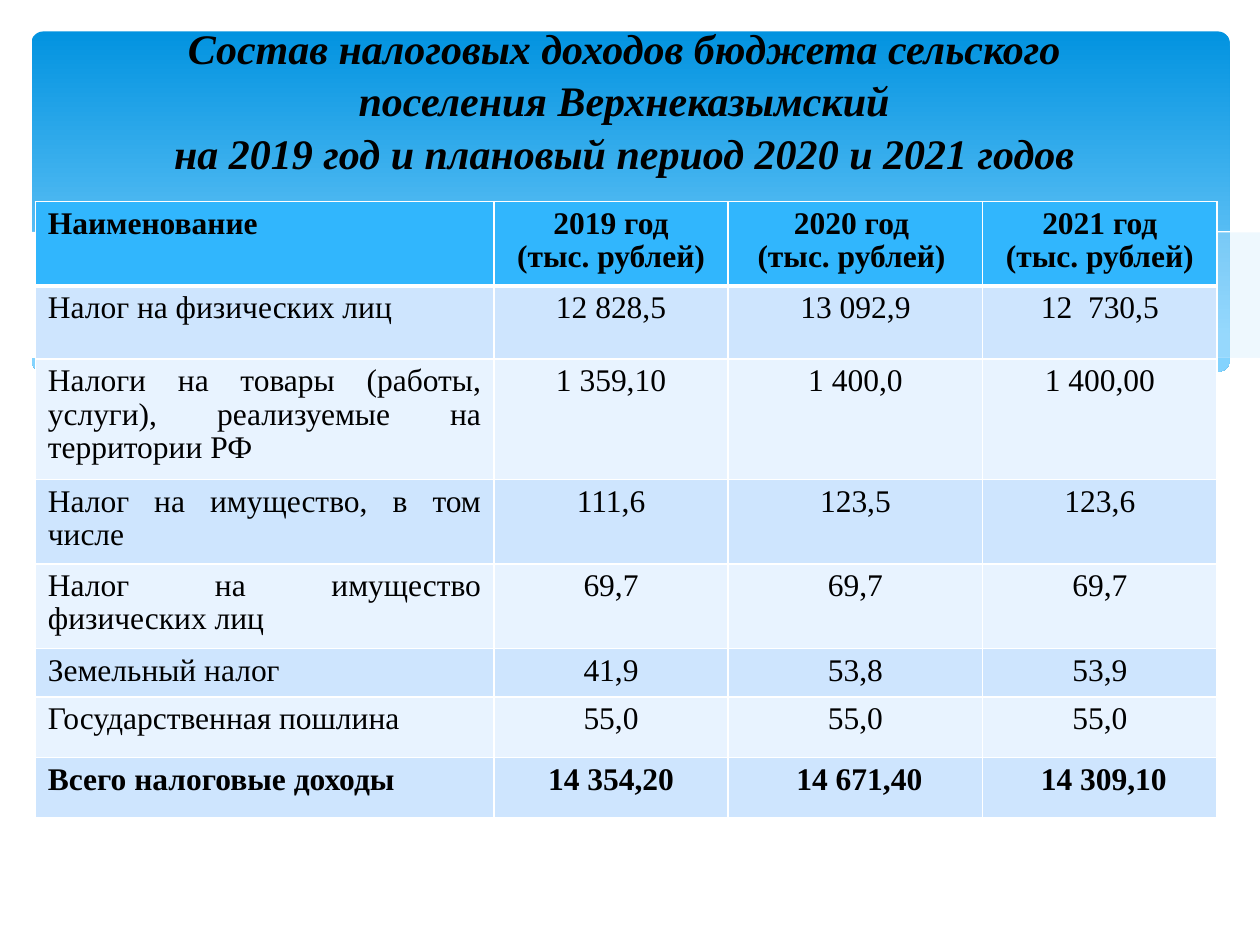
from lxml import etree
from pptx import Presentation
from pptx.dml.color import RGBColor
from pptx.enum.shapes import MSO_SHAPE
from pptx.enum.text import MSO_ANCHOR, PP_ALIGN
from pptx.oxml.ns import qn
from pptx.util import Inches, Pt

ROUND_RECT = MSO_SHAPE.ROUNDED_RECTANGLE
MIDDLE = MSO_ANCHOR.MIDDLE
LEFT, CENTER, JUSTIFY = PP_ALIGN.LEFT, PP_ALIGN.CENTER, PP_ALIGN.JUSTIFY

BLACK = RGBColor(0x00, 0x00, 0x00)
WHITE = RGBColor(0xFF, 0xFF, 0xFF)
SKY_TOP = RGBColor(0x02, 0x93, 0xE0)
SKY_BOTTOM = RGBColor(0x83, 0xD3, 0xFE)
WAVE = RGBColor(0xC6, 0xE7, 0xFC)
HEADER = RGBColor(0x31, 0xB6, 0xFD)
BAND_DARK = RGBColor(0xCE, 0xE5, 0xFE)
BAND_LIGHT = RGBColor(0xE8, 0xF3, 0xFF)
FONT = "Times New Roman"

RIGHT_WAVE = [
    (9.52, 0.16), (9.12, 0.23), (8.68, 0.32), (8.09, 0.46), (7.3, 0.64),
    (6.38, 0.81), (6.82, 0.87), (7.34, 0.92), (7.91, 0.94), (8.4, 0.91),
    (8.82, 0.85), (9.19, 0.75), (9.53, 0.63), (9.53, 0.16)]
MIDDLE_WAVE = [
    (8.7, 0.89), (7.84, 0.76), (6.83, 0.56), (6.06, 0.38), (5.32, 0.21),
    (4.66, 0.1), (3.97, 0.03), (3.38, 0.01), (2.63, 0.07), (3.39, 0.19),
    (4.26, 0.38), (5.07, 0.56), (5.78, 0.71), (6.57, 0.84), (7.25, 0.92),
    (7.95, 0.94), (8.34, 0.93)]
FALLING_LINE = [
    (2.86, 0.11), (3.3, 0.05), (3.93, 0.03), (4.66, 0.06), (5.33, 0.13),
    (6.13, 0.24), (7.04, 0.42), (8.08, 0.67), (8.84, 0.88)]
RISING_LINE = [
    (5.9, 0.73), (6.72, 0.51), (7.53, 0.32), (8.43, 0.15), (9.01, 0.06),
    (9.52, 0.01)]
WHITE_WAVE = [
    (9.54, 0.62), (9.17, 0.75), (8.76, 0.85), (8.27, 0.91), (7.7, 0.92),
    (7.03, 0.88), (6.25, 0.78), (5.32, 0.61), (4.24, 0.36), (3.42, 0.18),
    (2.69, 0.06), (2.07, 0.01), (1.54, 0), (0.96, 0.03), (0.53, 0.11),
    (0.17, 0.21), (0, 0.29), (0, 1.45), (9.54, 1.45)]

TITLE = [
    "Состав налоговых доходов бюджета сельского ",
    "поселения Верхнеказымский ",
    "на 2019 год и плановый период 2020 и 2021 годов "]
COLUMNS = [3.64, 1.86, 2.02, 1.86]
ROW_HEIGHTS = [0.58, 0.58, 0.89, 0.58, 0.58, 0.33, 0.48, 0.48]
ROWS = [
    ["Наименование", "2019 год\n (тыс. рублей) ", "2020 год \n(тыс. рублей) ",
     "2021 год\n (тыс. рублей) "],
    ["Налог на физических лиц ", "12 828,5", "13 092,9", "12  730,5"],
    ["Налоги на товары (работы, услуги), реализуемые на территории РФ",
     "1 359,10", "1 400,0", "1 400,00"],
    ["Налог на имущество, в том числе ", "111,6", "123,5", "123,6"],
    ["Налог на имущество физических лиц", "69,7", "69,7", "69,7"],
    ["Земельный налог ", "41,9", "53,8", "53,9"],
    ["Государственная пошлина ", "55,0", "55,0", "55,0"],
    ["Всего налоговые доходы ", "14 354,20", " 14 671,40", " 14 309,10"]]


def add_run(p, text, size, bold, italic=False):
    """Add one black run to a paragraph."""
    r = p.add_run()
    r.text = text
    r.font.name, r.font.size = FONT, Pt(size)
    r.font.bold, r.font.italic = bold, italic
    r.font.color.rgb = BLACK


def add_panel(s, left, top, width, height):
    """Draw the rounded gradient panel."""
    sp = s.shapes.add_shape(ROUND_RECT, left, top, width, height)
    sp.adjustments[0] = 0.034
    sp.shadow.inherit = False
    sp.line.fill.background()
    sp.fill.gradient()
    sp.fill.gradient_angle = 270
    for stop, color, position in zip(
            sp.fill.gradient_stops, (SKY_TOP, SKY_BOTTOM), (0, 0.9)):
        stop.color.rgb = color
        stop.position = position


def add_curve(s, left, top, points, fill=None, alpha=100):
    """Draw a filled wave, or a thin white open line when no fill is given."""
    builder = s.shapes.build_freeform(*points[0], scale=Inches(1))
    builder.add_line_segments(points[1:], close=fill is not None)
    sp = builder.convert_to_shape(left, top)
    sp.shadow.inherit = False
    if fill is None:
        sp.fill.background()
        sp.line.color.rgb = WHITE
        sp.line.width = Pt(0)
        return
    sp.line.fill.background()
    sp.fill.solid()
    sp.fill.fore_color.rgb = fill
    if alpha < 100:
        color = sp.fill._xPr.find(".//" + qn("a:srgbClr"))
        etree.SubElement(color, qn("a:alpha"), val=str(alpha * 1000))


def add_waves(s, left, top):
    """Layer the waves over the lower part of the panel."""
    add_curve(s, left, top, RIGHT_WAVE, WAVE, 29)
    add_curve(s, left, top, MIDDLE_WAVE, WAVE, 40)
    add_curve(s, left, top, FALLING_LINE)
    add_curve(s, left, top, RISING_LINE)
    add_curve(s, left, top, WHITE_WAVE, WHITE)


def add_title(s, left, top, width, height):
    """Write the centred three-line title."""
    tf = s.shapes.add_textbox(left, top, width, height).text_frame
    tf.word_wrap = True
    tf.vertical_anchor = MIDDLE
    tf.margin_bottom = Inches(0.38)
    p = tf.paragraphs[0]
    p.alignment = CENTER
    p.line_spacing = 1.05
    for i, line in enumerate(TITLE):
        if i:
            p.add_line_break()
        add_run(p, line, 24, True, True)


def set_borders(cell, **widths):
    """Give the cell white borders of the given widths in points."""
    tc_pr = cell._tc.get_or_add_tcPr()
    for side, width in widths.items():
        ln = etree.SubElement(tc_pr, qn("a:ln" + side), w=str(Pt(width)))
        fill = etree.SubElement(ln, qn("a:solidFill"))
        etree.SubElement(fill, qn("a:srgbClr"), val=str(WHITE))


def add_tax_table(s, left, top, width, height):
    """Build the table of tax revenues by year."""
    table = s.shapes.add_table(
        len(ROWS), len(COLUMNS), left, top, width, height).table
    table.horz_banding = False
    for column, w in zip(table.columns, COLUMNS):
        column.width = Inches(w)
    for i, (values, h) in enumerate(zip(ROWS, ROW_HEIGHTS)):
        table.rows[i].height = Inches(h)
        color = HEADER if i == 0 else BAND_DARK if i % 2 else BAND_LIGHT
        for j, value in enumerate(values):
            cell = table.cell(i, j)
            set_borders(cell, L=1, R=1, T=3 if i == 1 else 1,
                        B=3 if i == 0 else 1)
            cell.fill.solid()
            cell.fill.fore_color.rgb = color
            tf = cell.text_frame
            for k, line in enumerate(value.split("\n")):
                p = tf.add_paragraph() if k else tf.paragraphs[0]
                p.alignment = CENTER if j else JUSTIFY if i else LEFT
                p.line_spacing = 0.95
                add_run(p, line, 18, i in (0, len(ROWS) - 1))


def main():
    """Build and save the slide."""
    prs = Presentation()
    prs.slide_width, prs.slide_height = Inches(10), Inches(7.5)
    s = prs.slides.add_slide(prs.slide_layouts[6])
    add_panel(s, Inches(0.25), Inches(0.25), Inches(9.51), Inches(2.7))
    add_waves(s, Inches(0.23), Inches(1.84))
    add_title(s, Inches(0.5), Inches(0.36), Inches(8.99), Inches(1.18))
    add_tax_table(s, Inches(0.28), Inches(1.6), Inches(9.37), Inches(4.5))
    prs.save("out.pptx")


if __name__ == "__main__":
    main()
